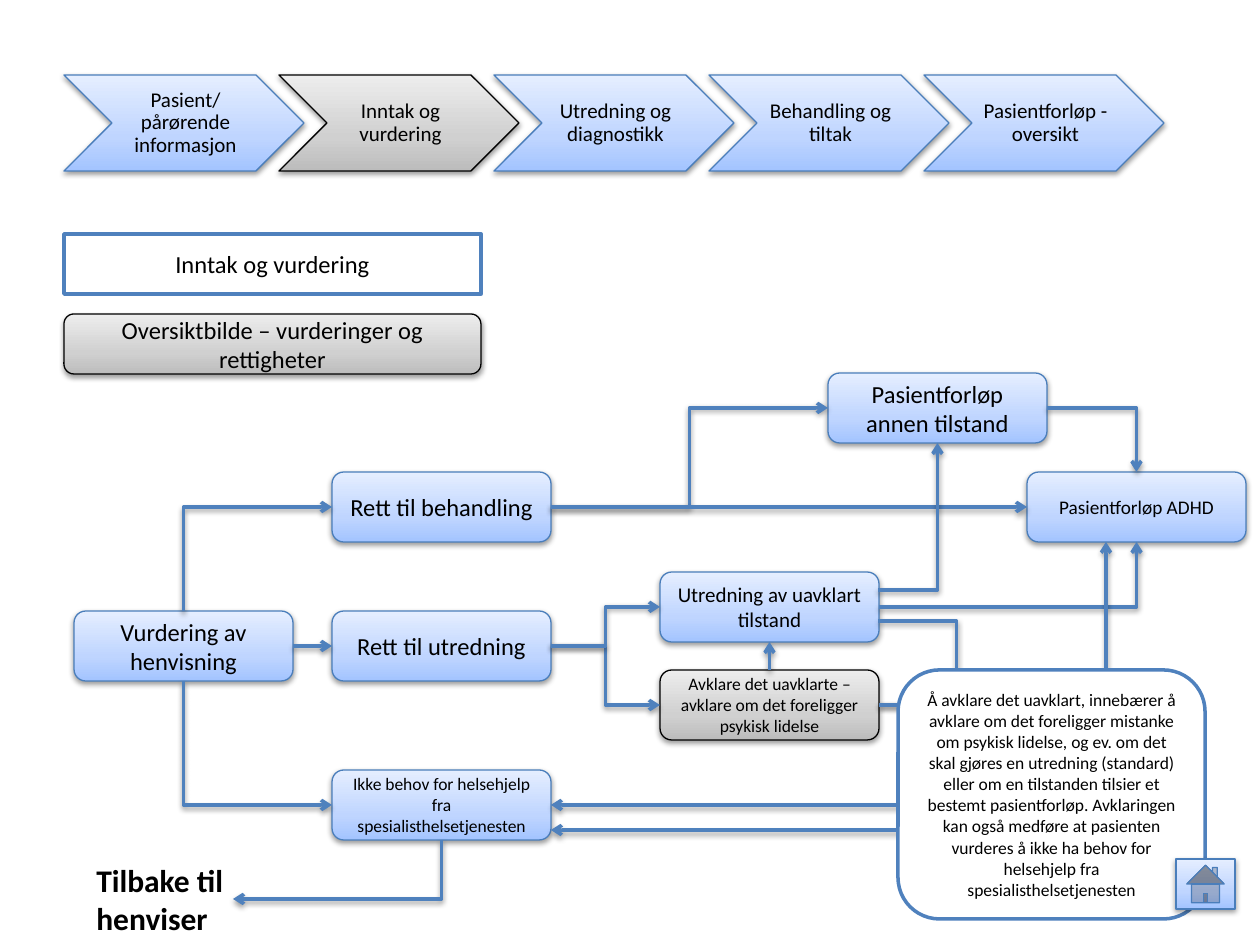
from copy import deepcopy

from lxml.etree import SubElement
from pptx import Presentation
from pptx.dml.color import RGBColor
from pptx.enum.shapes import MSO_CONNECTOR as Connector, MSO_SHAPE as Shape
from pptx.enum.text import MSO_ANCHOR as Anchor, MSO_AUTO_SIZE as AutoSize, PP_ALIGN as Align
from pptx.oxml.ns import qn
from pptx.util import Pt

PX = 914400 / 126
FONT = "Calibri"
BLACK = RGBColor(0x00, 0x00, 0x00)
WHITE = RGBColor(0xFF, 0xFF, 0xFF)
ACCENT = RGBColor(0x4F, 0x81, 0xBD)
EDGE = RGBColor(0x4A, 0x7E, 0xBB)
BLUES = (RGBColor(0xA3, 0xC4, 0xFF), RGBColor(0xBF, 0xD5, 0xFF), RGBColor(0xE5, 0xEE, 0xFF))
GREYS = (RGBColor(0xBC, 0xBC, 0xBC), RGBColor(0xD0, 0xD0, 0xD0), RGBColor(0xED, 0xED, 0xED))
STOPS = (0, 0.35, 1)
TOP, LEFT, BOTTOM, RIGHT = range(4)  # connection sites of a box
BOX_W, BOX_H = 219, 70


def px(*lengths):
    return [round(length * PX) for length in lengths]


def write(shape, text, size=14, bold=False, align=Align.CENTER, anchor=Anchor.MIDDLE,
          insets=None, spacing=None):
    frame = shape.text_frame
    frame.word_wrap = True
    frame.auto_size = AutoSize.NONE
    frame.vertical_anchor = anchor
    if insets:
        (frame.margin_left, frame.margin_top,
         frame.margin_right, frame.margin_bottom) = px(*insets)
    para = frame.paragraphs[0]
    para.alignment = align
    para.line_spacing = spacing
    span = para.add_run()
    span.text = text
    span.font.name, span.font.size, span.font.bold = FONT, Pt(size), bold
    span.font.color.rgb = BLACK


def add_shadow(effects):
    shadow = SubElement(effects, qn("a:outerShdw"), blurRad="40000", dist="20000",
                        dir="5400000", rotWithShape="0")
    color = SubElement(shadow, qn("a:srgbClr"), val=str(BLACK))
    SubElement(color, qn("a:alpha"), val="38000")


def shaded(shapes, kind, left, top, width, height, grey=False):
    """A preset shape with a vertical gradient and a soft shadow."""
    shape = shapes.add_shape(kind, *px(left, top, width, height))
    shape.fill.gradient()
    properties = shape.element.spPr
    stop_list = properties.find(".//" + qn("a:gsLst"))
    stop_list.append(deepcopy(stop_list[0]))
    for stop, position, color in zip(shape.fill.gradient_stops, STOPS, GREYS if grey else BLUES):
        stop.position, stop.color.rgb = position, color
    shape.fill.gradient_angle = 90
    shape.line.color.rgb = BLACK if grey else EDGE
    shape.line.width = Pt(0.75)
    shape.shadow.inherit = False
    add_shadow(properties.find(qn("a:effectLst")))
    return shape


def step(slide, text, left, top, size=14, width=BOX_W, height=BOX_H, grey=False):
    box = shaded(slide.shapes, Shape.ROUNDED_RECTANGLE, left, top, width, height, grey)
    write(box, text, size)
    return box


def outline(shape):
    shape.fill.solid()
    shape.fill.fore_color.rgb = WHITE
    shape.line.color.rgb = ACCENT
    shape.line.width = Pt(2)


def chevron(slide, text, left, grey=False):
    top, width, height = 75, 240, 96
    group = slide.shapes.add_group_shape()
    shaded(group.shapes, Shape.CHEVRON, left, top, width, height, grey)
    label = group.shapes.add_textbox(*px(left + 48, top, 144, height))
    write(label, text, 12, insets=(6, 3, 3, 3), spacing=0.9)


def heading(slide, text, left, top, width, height):
    title = slide.shapes.title
    title.left, title.top, title.width, title.height = px(left, top, width, height)
    geometry = SubElement(title.element.spPr, qn("a:prstGeom"), prst="roundRect")
    SubElement(geometry, qn("a:avLst"))
    outline(title)
    write(title, text)


def turn_downward(arrow):
    """Make a one-corner elbow leave its start vertically."""
    dx, dy = arrow.end_x - arrow.begin_x, arrow.end_y - arrow.begin_y
    middle_x, middle_y = arrow.begin_x + dx // 2, arrow.begin_y + dy // 2
    arrow.width, arrow.height = abs(dy), abs(dx)
    arrow.left, arrow.top = middle_x - abs(dy) // 2, middle_y - abs(dx) // 2
    xfrm = arrow.element.spPr.find(qn("a:xfrm"))
    xfrm.set("rot", "5400000" if dy > 0 else "16200000")
    xfrm.set("flipH", "0")
    xfrm.set("flipV", "1" if (dx > 0) == (dy > 0) else "0")


def link(slide, start, end, bend=None):
    """Arrow between (box, site) or (x, y) ends.

    bend is None for straight, "across" or "down" for one corner by first
    direction, or the fraction of the way at which a two-corner elbow turns.
    """
    kind = Connector.STRAIGHT if bend is None else Connector.ELBOW
    start_free, end_free = isinstance(start[0], int), isinstance(end[0], int)
    points = (start if start_free else (0, 0)) + (end if end_free else (0, 0))
    arrow = slide.shapes.add_connector(kind, *px(*points))
    if not start_free:
        arrow.begin_connect(*start)
    if not end_free:
        arrow.end_connect(*end)
    properties = arrow.element.spPr
    geometry = properties.find(qn("a:prstGeom"))
    if bend in ("across", "down"):
        geometry.set("prst", "bentConnector2")
        if bend == "down":
            turn_downward(arrow)
    elif bend is not None:
        guides = geometry.find(qn("a:avLst"))
        if guides is None:
            guides = SubElement(geometry, qn("a:avLst"))
        SubElement(guides, qn("a:gd"), name="adj1", fmla=f"val {round(bend * 100000)}")
    arrow.line.color.rgb = ACCENT
    arrow.line.width = Pt(2)
    SubElement(properties.find(qn("a:ln")), qn("a:tailEnd"), type="arrow")
    add_shadow(SubElement(properties, qn("a:effectLst")))


def main():
    deck = Presentation()
    deck.slide_width, deck.slide_height = px(1260, 945)
    slide = deck.slides.add_slide(deck.slide_layouts[5])

    # Headings
    heading(slide, "Inntak og vurdering", 64, 234, 417, 60)
    step(slide, "Oversiktbilde – vurderinger og rettigheter", 64, 314,
         width=417, height=60, grey=True)

    # Flow boxes
    referral = step(slide, "Vurdering av henvisning", 74, 611)
    no_need = step(slide, "Ikke behov for helsehjelp fra spesialisthelsetjenesten", 332, 770, 10)
    assess = step(slide, "Rett til utredning", 332, 611)
    treat = step(slide, "Rett til behandling", 332, 472)
    other = step(slide, "Pasientforløp annen tilstand", 828, 373)
    adhd = step(slide, "Pasientforløp ADHD", 1027, 472, 11)
    unclear = step(slide, "Utredning av uavklart tilstand", 660, 572, 12)
    clarify = step(slide, "Avklare det uavklarte – avklare om det foreligger psykisk lidelse",
                   660, 670, 10, grey=True)
    back = slide.shapes.add_textbox(*px(84, 855, 179, 90))
    write(back, "Tilbake til henviser", 18, bold=True, align=Align.LEFT, anchor=Anchor.TOP)

    # Arrows
    for start, end, bend in (
        ((referral, BOTTOM), (no_need, LEFT), "down"),
        ((no_need, BOTTOM), (233, 899), "down"),
        ((referral, TOP), (treat, LEFT), "down"),
        ((referral, RIGHT), (assess, LEFT), None),
        ((assess, RIGHT), (clarify, LEFT), 0.5),
        ((assess, RIGHT), (unclear, LEFT), 0.5),
        ((treat, RIGHT), (other, LEFT), 0.5),
        ((treat, RIGHT), (adhd, LEFT), None),
        ((unclear, RIGHT), (adhd, BOTTOM), "across"),
        ((878, 590), (other, BOTTOM), "across"),
        ((other, RIGHT), (adhd, TOP), "across"),
        ((clarify, RIGHT), (no_need, RIGHT), -0.1),
        ((878, 621), (551, 830), -0.24),
        ((clarify, RIGHT), (1106, 542), "across"),
        ((clarify, TOP), (unclear, BOTTOM), None),
    ):
        link(slide, start, end, bend)

    # Explanation and home button
    note = slide.shapes.add_shape(Shape.ROUNDED_RECTANGLE, *px(898, 670, 307, 249))
    note.shadow.inherit = False
    outline(note)
    write(note, "Å avklare det uavklart, innebærer å avklare om det foreligger mistanke om "
          "psykisk lidelse, og ev. om det skal gjøres en utredning (standard) eller om en "
          "tilstanden tilsier et bestemt pasientforløp. Avklaringen kan også medføre at "
          "pasienten vurderes å ikke ha behov for helsehjelp fra spesialisthelsetjenesten", 10)
    shaded(slide.shapes, Shape.ACTION_BUTTON_HOME, 1176, 859, 59, 50)

    # Pathway across the top
    phases = ("Pasient/ pårørende informasjon", "Inntak og vurdering",
              "Utredning og diagnostikk", "Behandling og tiltak", "Pasientforløp - oversikt")
    for index, phase in enumerate(phases):
        chevron(slide, phase, 64 + 215 * index, grey=index == 1)

    deck.save("out.pptx")


if __name__ == "__main__":
    main()
